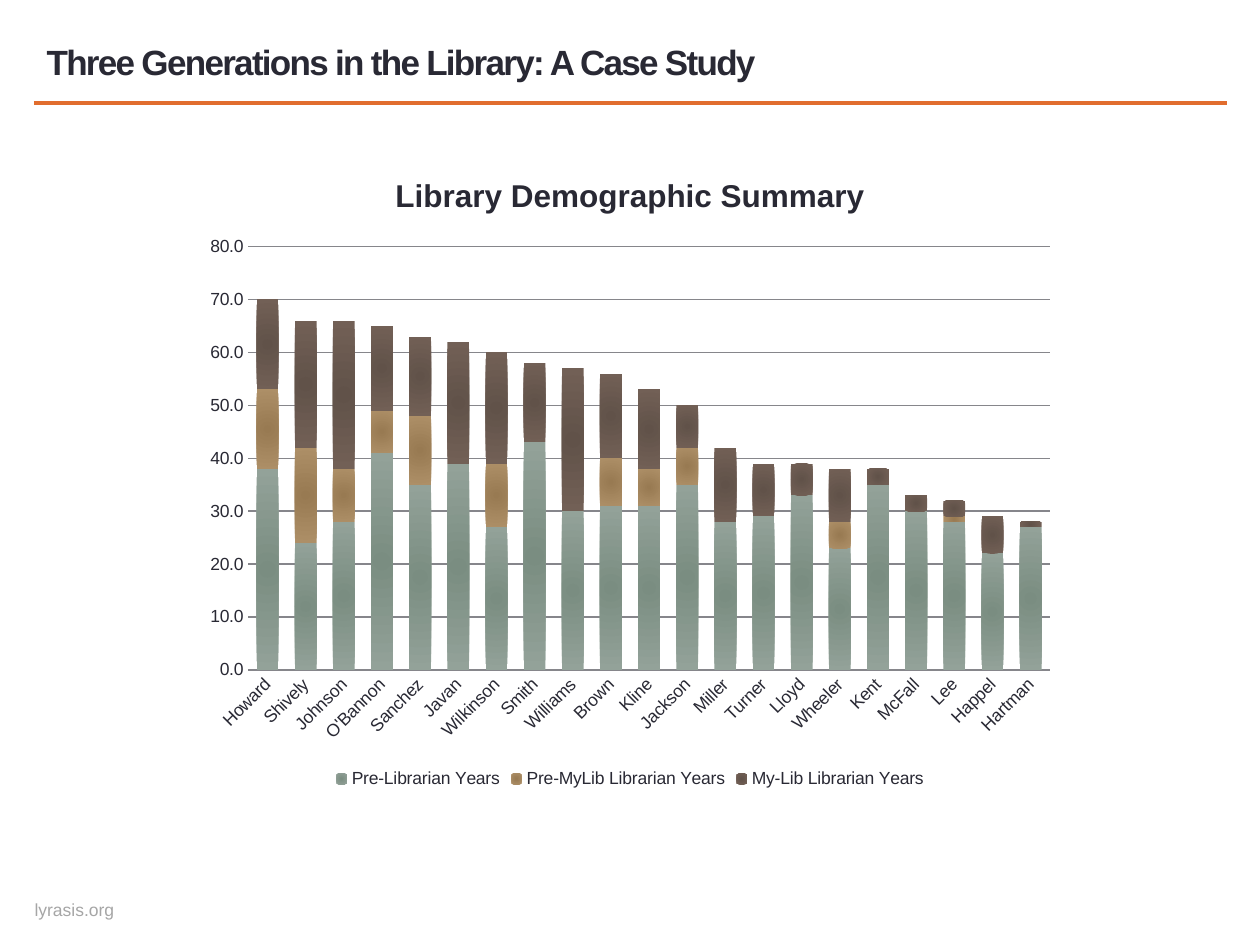
from lxml import etree
from pptx import Presentation
from pptx import util as u
from pptx.chart.data import CategoryChartData
from pptx.dml.color import RGBColor
from pptx.enum import chart as ch, shapes, text
from pptx.oxml import ns

INK = RGBColor(0x29, 0x29, 0x34)
ORANGE = RGBColor(0xE1, 0x6D, 0x2E)
GRAY = RGBColor(0xA6, 0xA6, 0xA6)
GRID = RGBColor(0x86, 0x86, 0x8B)
SAGE = RGBColor(0x93, 0xA2, 0x99)
TAN = RGBColor(0xAD, 0x8F, 0x67)
BROWN = RGBColor(0x72, 0x60, 0x56)

NAMES = ["Howard", "Shively", "Johnson", "O'Bannon", "Sanchez", "Javan", "Wilkinson",
         "Smith", "Williams", "Brown", "Kline", "Jackson", "Miller", "Turner", "Lloyd",
         "Wheeler", "Kent", "McFall", "Lee", "Happel", "Hartman"]
SERIES = [
    ("Pre-Librarian Years", SAGE,
     [38, 24, 28, 41, 35, 39, 27, 43, 30, 31, 31, 35, 28, 29, 33, 23, 35, 30, 28, 22, 27]),
    ("Pre-MyLib Librarian Years", TAN,
     [15, 18, 10, 8, 13, 0, 12, 0, 0, 9, 7, 7, 0, 0, 0, 5, 0, 0, 1, 0, 0]),
    ("My-Lib Librarian Years", BROWN,
     [17, 24, 28, 16, 15, 23, 21, 15, 27, 16, 15, 8, 14, 10, 6, 10, 3, 3, 3, 7, 1]),
]


class Deck:
    """Holds the text style and the current slide, and adds each kind of element."""

    def __init__(self, font="Arial"):
        self.font = font
        self.prs = Presentation()
        self.prs.slide_width, self.prs.slide_height = u.Inches(10), u.Inches(7.5)
        self.s = self.prs.slides.add_slide(self.prs.slide_layouts[5])

    def style(self, font, size, color, bold=False):
        font.name, font.size, font.bold = self.font, u.Pt(size), bold
        font.color.rgb = color

    def title(self, words, box):
        sp = self.s.shapes.title
        sp.left, sp.top, sp.width, sp.height = map(u.Inches, box)
        tf = sp.text_frame
        tf.text = words
        tf.vertical_anchor = text.MSO_ANCHOR.MIDDLE
        tf.auto_size = text.MSO_AUTO_SIZE.NONE
        p = tf.paragraphs[0]
        p.alignment = text.PP_ALIGN.LEFT
        r = p.runs[0]
        self.style(r.font, 20, INK, True)
        r.font._element.set("spc", "-100")

    def label(self, words, box, size, color):
        tf = self.s.shapes.add_textbox(*map(u.Inches, box)).text_frame
        tf.margin_left = tf.margin_right = tf.margin_top = tf.margin_bottom = 0
        tf.vertical_anchor = text.MSO_ANCHOR.MIDDLE
        tf.word_wrap = False
        tf.auto_size = text.MSO_AUTO_SIZE.SHAPE_TO_FIT_TEXT
        tf.text = words
        p = tf.paragraphs[0]
        p.alignment = text.PP_ALIGN.CENTER
        self.style(p.runs[0].font, size, color)

    def rule(self, x1, x2, y, color, width):
        line = self.s.shapes.add_connector(
            shapes.MSO_CONNECTOR.STRAIGHT, *map(u.Inches, (x1, y, x2, y)))
        line.line.color.rgb, line.line.width = color, u.Pt(width)
        etree.SubElement(line._element.spPr, ns.qn("a:effectLst"))

    def radial_fill(self, series, color):
        fill = series.format.fill
        fill.gradient()
        for stop, brightness in zip(fill.gradient_stops, (-0.15, 0)):
            stop.color.rgb = color
            stop.color.brightness = brightness
        grad = series._element.find(".//" + ns.qn("a:gradFill"))
        grad.remove(grad.find(ns.qn("a:lin")))
        shade = etree.SubElement(grad, ns.qn("a:path"), path="circle")
        etree.SubElement(shade, ns.qn("a:fillToRect"), dict.fromkeys("ltrb", "50000"))

    def stacked_columns(self, heading, names, series, box):
        data = CategoryChartData(number_format="0.0")
        data.categories = names
        for name, _, values in series:
            data.add_series(name, values)
        chart = self.s.shapes.add_chart(
            ch.XL_CHART_TYPE.COLUMN_STACKED, *map(u.Inches, box), data).chart
        self.style(chart.font, 10, INK)
        chart.has_title = True
        tf = chart.chart_title.text_frame
        tf.text = heading
        self.style(tf.paragraphs[0].runs[0].font, 18, INK, True)
        chart.has_legend = True
        chart.legend.position = ch.XL_LEGEND_POSITION.BOTTOM
        chart.legend.include_in_layout = False
        cats, vals = chart.category_axis, chart.value_axis
        for axis in (cats, vals):
            axis.major_tick_mark = axis.minor_tick_mark = ch.XL_TICK_MARK.NONE
        cats.format.line.color.rgb = GRID
        vals.format.line.fill.background()
        vals.minimum_scale, vals.maximum_scale, vals.major_unit = 0, 80, 10
        vals.tick_labels.number_format = "0.0"
        vals.tick_labels.number_format_is_linked = False
        vals.major_gridlines.format.line.color.rgb = GRID
        vals.major_gridlines.format.line.width = u.Pt(0.75)
        plot = chart.plots[0]
        plot.gap_width, plot.overlap, plot.vary_by_categories = 75, 100, False
        for ser, (_, color, _) in zip(plot.series, series):
            self.radial_fill(ser, color)


def main():
    deck = Deck()
    deck.rule(0.27, 9.74, 0.82, ORANGE, 2.08)
    deck.label("lyrasis.org", (0.27, 7.13, 0.64, 0.17), 10, GRAY)
    deck.title("Three Generations in the Library: A Case Study", (0.27, 0.24, 7.32, 0.5))
    deck.stacked_columns("Library Demographic Summary", NAMES, SERIES,
                         (1.53, 1.19, 6.94, 5.11))
    deck.prs.save("out.pptx")


if __name__ == "__main__":
    main()
